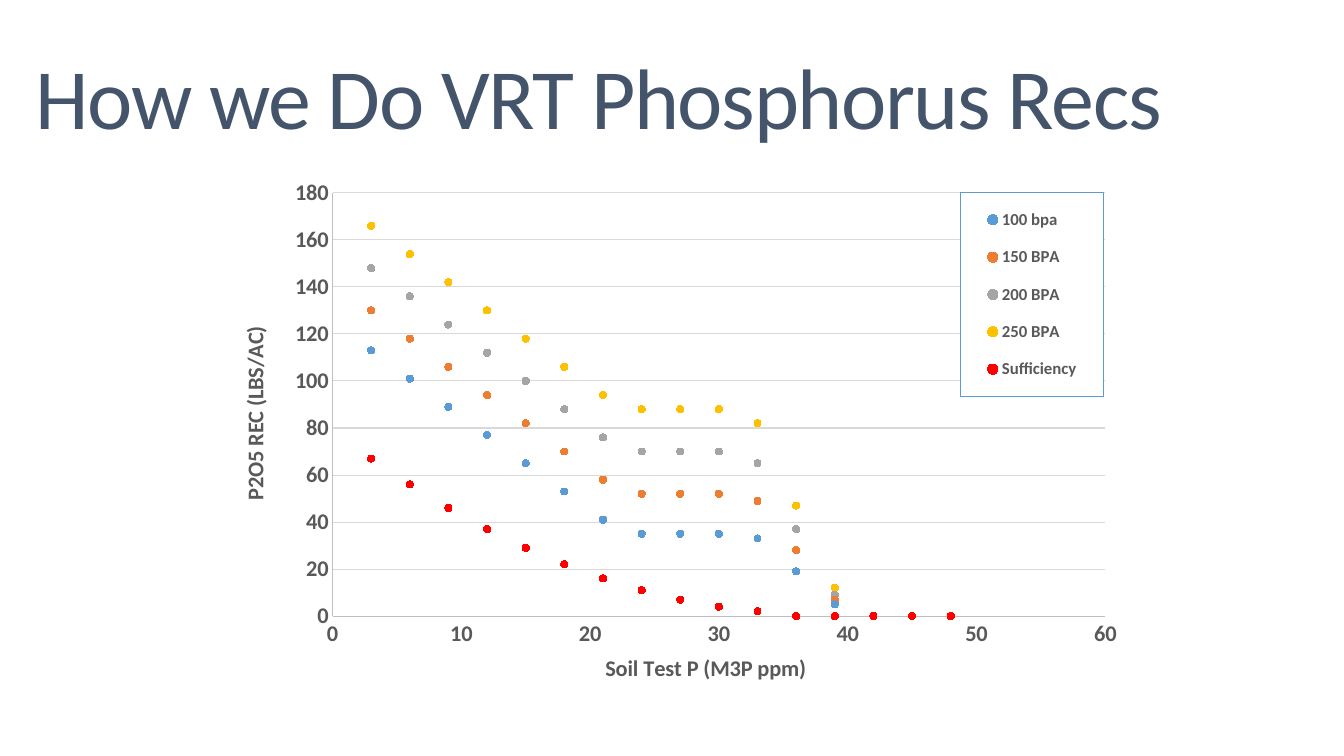
import lxml.etree
import pptx
import pptx.chart.data
import pptx.dml.color
import pptx.enum.chart
import pptx.enum.text
import pptx.oxml
import pptx.oxml.ns
import pptx.util

RGBColor = pptx.dml.color.RGBColor
TITLE_COLOR = RGBColor(0x44, 0x54, 0x6A)
TEXT_COLOR = RGBColor(0x59, 0x59, 0x59)
AXIS_COLOR = RGBColor(0xBF, 0xBF, 0xBF)
GRID_COLOR = RGBColor(0xD9, 0xD9, 0xD9)
BLUE = RGBColor(0x5B, 0x9B, 0xD5)
ORANGE = RGBColor(0xED, 0x7D, 0x31)
GRAY = RGBColor(0xA5, 0xA5, 0xA5)
GOLD = RGBColor(0xFF, 0xC0, 0x00)
RED = RGBColor(0xFF, 0x00, 0x00)

FONT = "Calibri"
TITLE = "How we Do VRT Phosphorus Recs"
SOIL_TEST = range(3, 49, 3)
RECOMMENDATIONS = [
    ("100 bpa", BLUE, [113, 101, 89, 77, 65, 53, 41, 35, 35, 35, 33, 19, 5, -9, -23, -37]),
    ("150 BPA", ORANGE, [130, 118, 106, 94, 82, 70, 58, 52, 52, 52, 49, 28, 7, -14, -35, -56]),
    ("200 BPA", GRAY, [148, 136, 124, 112, 100, 88, 76, 70, 70, 70, 65, 37, 9, -19, -47, -75]),
    ("250 BPA", GOLD, [166, 154, 142, 130, 118, 106, 94, 88, 88, 88, 82, 47, 12, -23, -58, -93]),
    ("Sufficiency", RED, [67, 56, 46, 37, 29, 22, 16, 11, 7, 4, 2, 0, 0, 0, 0, 0]),
]
AXES = [("Soil Test P (M3P ppm)", 60, 10), ("P2O5 REC (LBS/AC)", 180, 20)]
TITLE_BOX = (0.22, 0.32, 12.22, 1.24)
CHART_BOX = (2.16, 1.65, 9.18, 5.19)
PLOT_SHARE = (0.124, 0.051, 0.835, 0.809)
LEGEND_SHARE = (0.803, 0.05, 0.154, 0.39)


def inches(box):
    return [pptx.util.Inches(length) for length in box]


def style_font(font, size, color, bold):
    font.name = FONT
    font.size = pptx.util.Pt(size)
    font.bold = bold
    font.color.rgb = color


def style_line(line, color):
    line.color.rgb = color
    line.width = pptx.util.Pt(0.75)


def manual_layout(share, inner=False):
    target = '<c:layoutTarget val="inner"/>' if inner else ""
    modes = "".join(f'<c:{side}Mode val="edge"/>' for side in "xy")
    values = "".join(f'<c:{key} val="{value}"/>' for key, value in zip("xywh", share))
    return pptx.oxml.parse_xml(
        f'<c:layout {pptx.oxml.ns.nsdecls("c")}><c:manualLayout>'
        f"{target}{modes}{values}</c:manualLayout></c:layout>"
    )


def drop_layout(element):
    for layout in element.findall(pptx.oxml.ns.qn("c:layout")):
        element.remove(layout)


def add_title(slide):
    title = slide.shapes.title
    title.left, title.top, title.width, title.height = inches(TITLE_BOX)
    frame = title.text_frame
    frame.text = TITLE
    frame.word_wrap = True
    frame.auto_size = pptx.enum.text.MSO_AUTO_SIZE.NONE
    frame.vertical_anchor = pptx.enum.text.MSO_ANCHOR.MIDDLE
    frame.margin_left = frame.margin_right = pptx.util.Inches(0.13)
    frame.margin_top = frame.margin_bottom = pptx.util.Inches(0.07)
    paragraph = frame.paragraphs[0]
    paragraph.alignment = pptx.enum.text.PP_ALIGN.LEFT
    run = paragraph.runs[0]
    style_font(run.font, 61.3, TITLE_COLOR, False)
    run.font._element.set("spc", "-100")


def style_axis(axis, title, maximum, step):
    axis.minimum_scale = 0
    axis.maximum_scale = maximum
    axis.major_unit = step
    axis.major_tick_mark = axis.minor_tick_mark = pptx.enum.chart.XL_TICK_MARK.NONE
    axis.has_major_gridlines = False
    style_font(axis.tick_labels.font, 16, TEXT_COLOR, True)
    style_line(axis.format.line, AXIS_COLOR)
    axis.axis_title.text_frame.text = title
    run = axis.axis_title.text_frame.paragraphs[0].runs[0]
    style_font(run.font, 16, TEXT_COLOR, True)


def style_legend(chart):
    chart.has_legend = True
    legend = chart.legend
    legend.position = pptx.enum.chart.XL_LEGEND_POSITION.RIGHT
    legend.include_in_layout = False
    style_font(legend.font, 12, TEXT_COLOR, True)
    drop_layout(legend._element)
    overlay = legend._element.find(pptx.oxml.ns.qn("c:overlay"))
    overlay.addprevious(manual_layout(LEGEND_SHARE))
    overlay.addnext(pptx.oxml.parse_xml(
        f'<c:spPr {pptx.oxml.ns.nsdecls("c", "a")}>'
        '<a:solidFill><a:srgbClr val="FFFFFF"/></a:solidFill>'
        f'<a:ln w="9525"><a:solidFill><a:srgbClr val="{BLUE}"/></a:solidFill></a:ln></c:spPr>'
    ))


def add_chart(slide):
    data = pptx.chart.data.XyChartData()
    for name, color, values in RECOMMENDATIONS:
        series = data.add_series(name)
        for soil_test, value in zip(SOIL_TEST, values):
            series.add_data_point(soil_test, value)
    chart = slide.shapes.add_chart(
        pptx.enum.chart.XL_CHART_TYPE.XY_SCATTER, *inches(CHART_BOX), data
    ).chart
    chart.has_title = False
    style_font(chart.font, 16, TEXT_COLOR, True)
    chart.plots[0].vary_by_categories = False
    for series, (name, color, values) in zip(chart.plots[0].series, RECOMMENDATIONS):
        series.smooth = False
        series.format.line.fill.background()
        series.marker.style = pptx.enum.chart.XL_MARKER_STYLE.CIRCLE
        series.marker.size = 5
        series.marker.format.fill.solid()
        series.marker.format.fill.fore_color.rgb = color
        style_line(series.marker.format.line, color)
    for axis, settings in zip((chart.category_axis, chart.value_axis), AXES):
        style_axis(axis, *settings)
    chart.value_axis.has_major_gridlines = True
    style_line(chart.value_axis.major_gridlines.format.line, GRID_COLOR)
    style_legend(chart)
    plot_area = chart._chartSpace.find(".//" + pptx.oxml.ns.qn("c:plotArea"))
    drop_layout(plot_area)
    plot_area.insert(0, manual_layout(PLOT_SHARE, inner=True))


def main():
    presentation = pptx.Presentation()
    presentation.slide_width, presentation.slide_height = inches((13.33, 7.5))
    slide = presentation.slides.add_slide(presentation.slide_layouts[5])
    add_title(slide)
    add_chart(slide)
    presentation.save("out.pptx")


if __name__ == "__main__":
    main()
